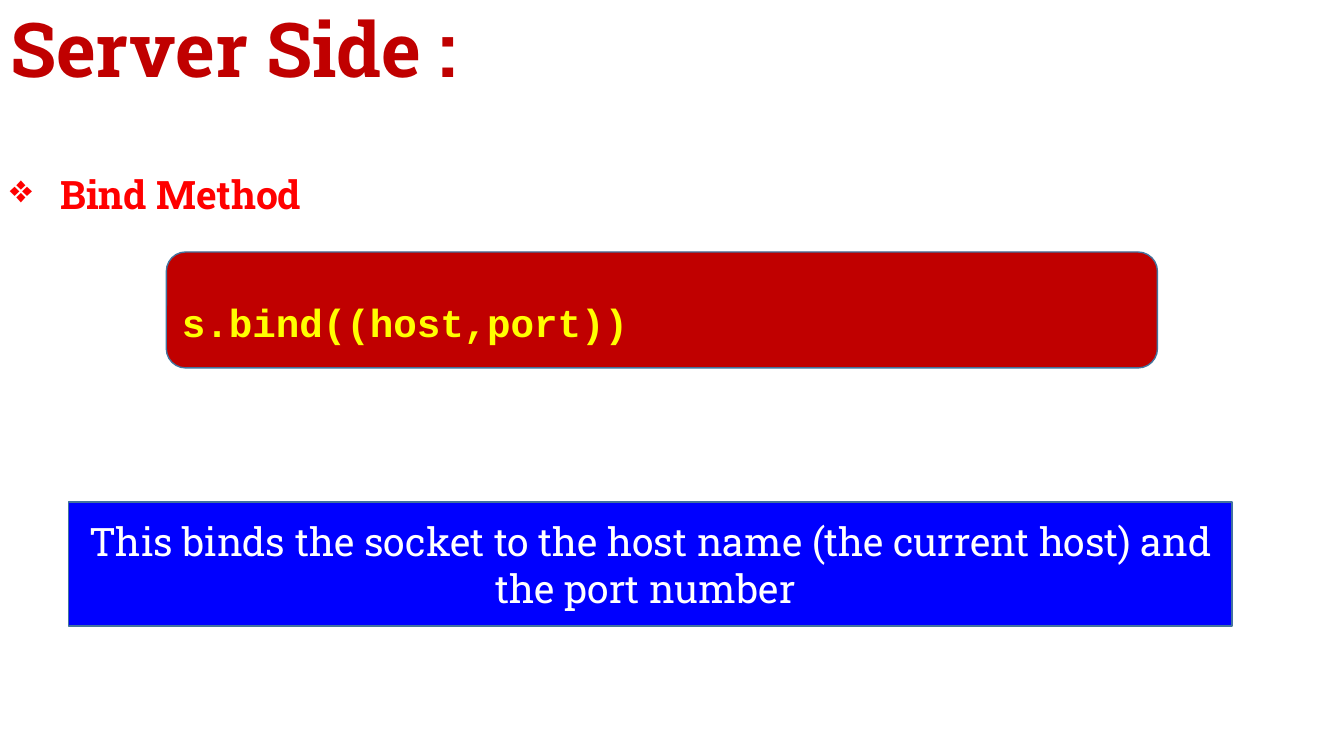
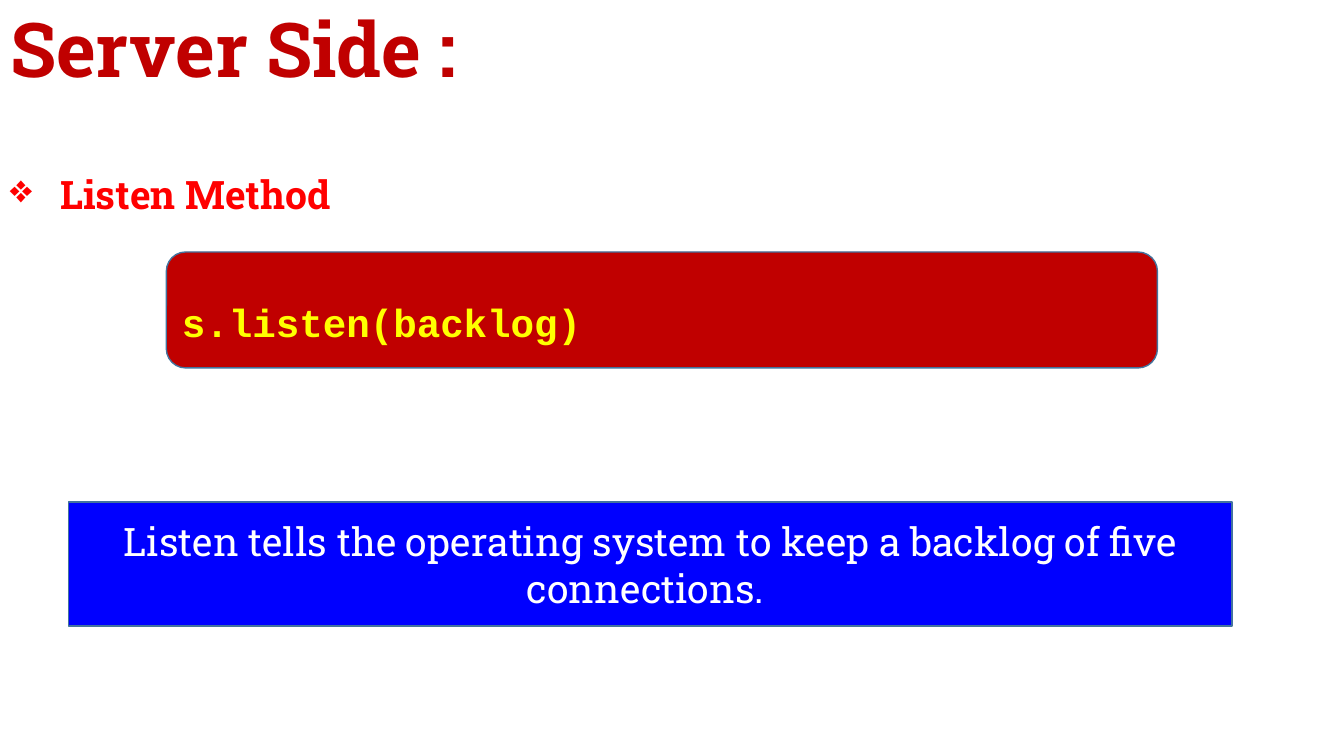
from lxml import etree
from pptx import Presentation
from pptx.dml.color import RGBColor
from pptx.enum.shapes import MSO_SHAPE as Preset
from pptx.enum.text import MSO_ANCHOR as Anchor, MSO_AUTO_SIZE as AutoSize, PP_ALIGN as Align
from pptx.oxml.ns import qn
from pptx.util import Inches, Pt

DARK_RED = RGBColor(0xC0, 0x00, 0x00)
RED = RGBColor(0xFF, 0x00, 0x00)
YELLOW = RGBColor(0xFF, 0xFF, 0x00)
BLUE = RGBColor(0x00, 0x00, 0xFF)
WHITE = RGBColor(0xFF, 0xFF, 0xFF)
OUTLINE = RGBColor(0x43, 0x73, 0x9E)

TEXT_FONT = "Roboto Slab"
CODE_FONT = "Courier New"
BODY_SIZE = 28
TITLE_SIZE = 54
TITLE_ONLY_LAYOUT = 5

METHODS = [
    ("Bind Method", "s.bind((host,port))",
     "This binds the socket to the host name (the current host) and the port number "),
    ("Listen Method", "s.listen(backlog)",
     "Listen tells the operating system to keep a backlog of five connections. "),
]


class Deck:
    """Holds the shared style and the slide being built."""

    def __init__(self):
        self.presentation = Presentation()
        self.presentation.slide_width = Inches(13.33)
        self.presentation.slide_height = Inches(7.5)
        self.slide = None

    def set_text(self, shape, text, color, align=Align.LEFT, spacing=1.0,
                 name=TEXT_FONT, size=BODY_SIZE, bold=True, anchor=Anchor.MIDDLE):
        frame = shape.text_frame
        frame.word_wrap = True
        frame.auto_size = AutoSize.NONE
        frame.vertical_anchor = anchor
        paragraph = frame.paragraphs[0]
        paragraph.text = text
        paragraph.alignment = align
        paragraph.line_spacing = spacing
        font = paragraph.font
        font.name, font.size, font.bold = name, Pt(size), bold
        font.color.rgb = color

    def add_slide(self, title):
        layout = self.presentation.slide_layouts[TITLE_ONLY_LAYOUT]
        self.slide = self.presentation.slides.add_slide(layout)
        shape = self.slide.shapes.title
        shape.left, shape.top = Inches(0), Inches(0)
        shape.width, shape.height = Inches(12), Inches(1.05)
        self.set_text(shape, title, DARK_RED, spacing=0.9, size=TITLE_SIZE)

    def add_heading(self, text):
        box = self.slide.shapes.add_textbox(
            Inches(0), Inches(1.17), Inches(13.33), Inches(0.9))
        properties = box.text_frame.paragraphs[0]._p.get_or_add_pPr()
        properties.set("marL", str(Inches(0.5)))
        properties.set("indent", str(Inches(-0.5)))
        etree.SubElement(properties, qn("a:buChar"), char="❖")
        self.set_text(box, text, RED, align=Align.JUSTIFY, spacing=2.0, anchor=Anchor.TOP)

    def add_panel(self, preset, left, top, width, height, fill):
        panel = self.slide.shapes.add_shape(
            preset, Inches(left), Inches(top), Inches(width), Inches(height))
        panel.shadow.inherit = False
        panel.fill.solid()
        panel.fill.fore_color.rgb = fill
        panel.line.color.rgb = OUTLINE
        panel.line.width = Pt(1)
        return panel

    def add_code(self, code):
        panel = self.add_panel(Preset.ROUNDED_RECTANGLE, 1.65, 2.5, 9.83, 1.15, DARK_RED)
        self.set_text(panel, code, YELLOW, spacing=1.5, name=CODE_FONT)

    def add_explanation(self, text):
        panel = self.add_panel(Preset.RECTANGLE, 0.68, 4.98, 11.54, 1.23, BLUE)
        self.set_text(panel, text, WHITE, align=Align.CENTER, bold=False)


def main():
    deck = Deck()
    for heading, code, explanation in METHODS:
        deck.add_slide("Server Side :")
        deck.add_heading(heading)
        deck.add_code(code)
        deck.add_explanation(explanation)
    deck.presentation.save("out.pptx")


if __name__ == "__main__":
    main()
